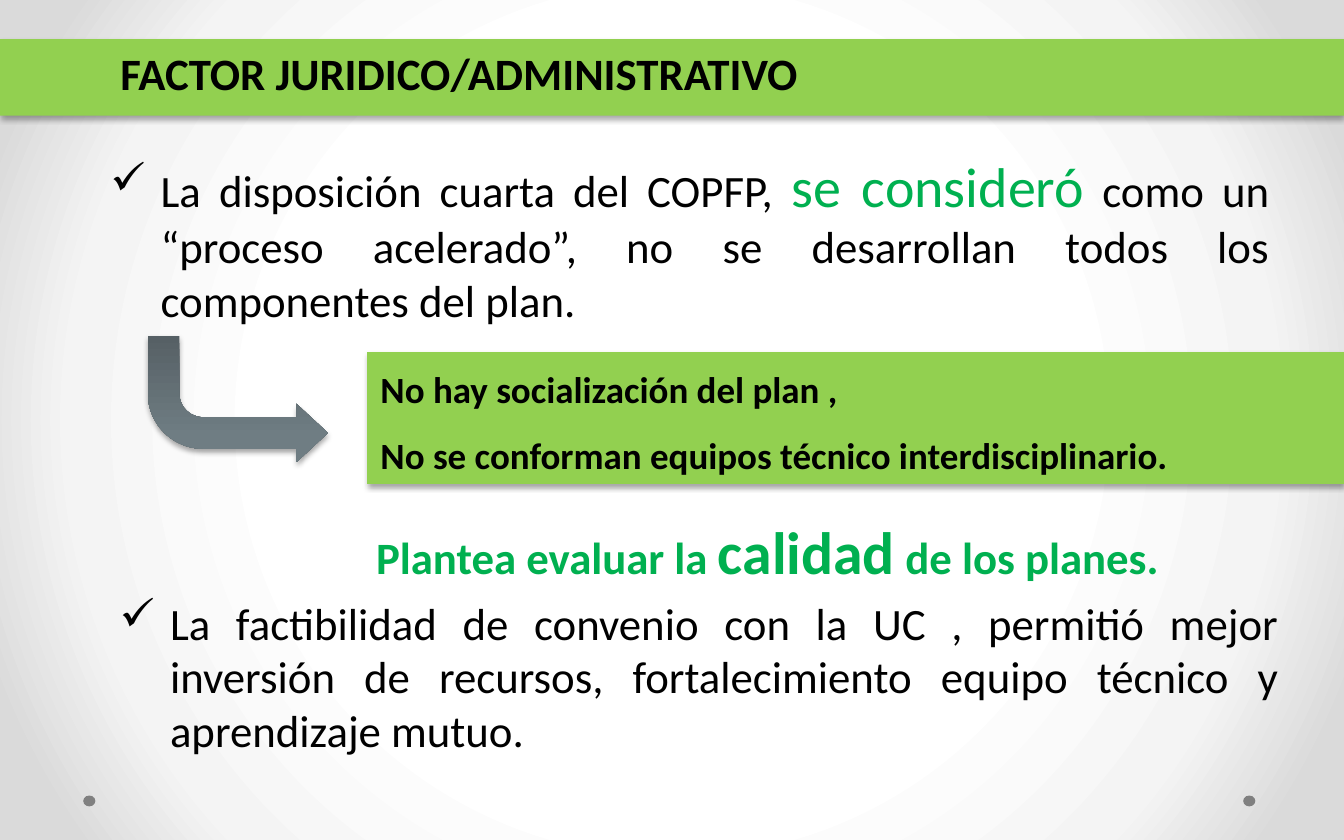
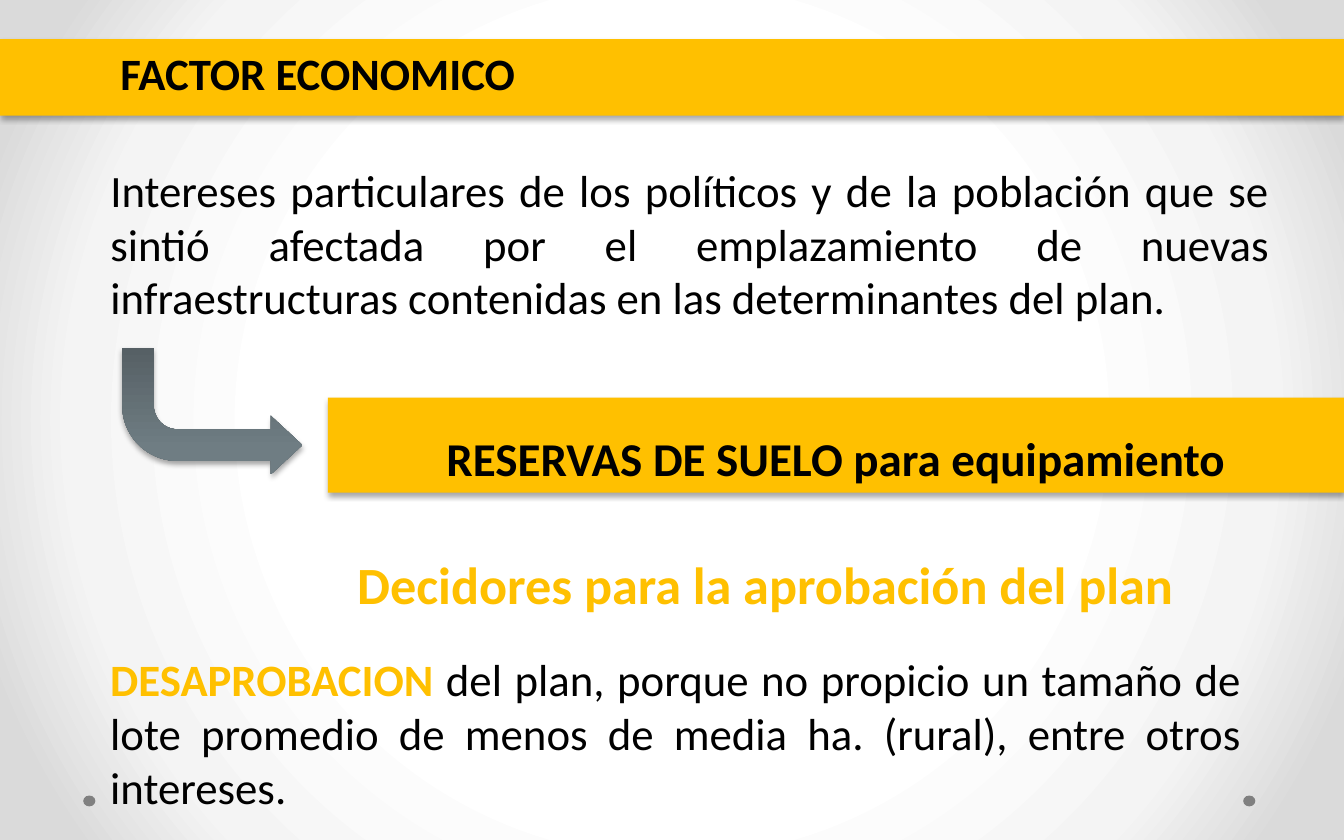
from dataclasses import dataclass
from typing import Any, NamedTuple, Optional

from lxml import etree
from pptx import Presentation
from pptx import util as u
from pptx.dml.color import RGBColor
from pptx.enum import shapes, text
from pptx.oxml import parse_xml
from pptx.oxml.ns import nsdecls, qn

BLACK = RGBColor(0x00, 0x00, 0x00)
GREY = RGBColor(0x80, 0x80, 0x80)
LIME = RGBColor(0x92, 0xD0, 0x50)
GREEN = RGBColor(0x00, 0xB0, 0x50)
AMBER = RGBColor(0xFF, 0xC0, 0x00)
WHITE = RGBColor(0xFF, 0xFF, 0xFF)
MIST = RGBColor(0xF4, 0xF4, 0xF4)
SILVER = RGBColor(0xDA, 0xDA, 0xDA)
SLATE_DARK = RGBColor(0x56, 0x60, 0x65)
SLATE = RGBColor(0x6F, 0x7D, 0x83)
SLATE_LIGHT = RGBColor(0x6F, 0x7E, 0x84)

FONT = "Calibri"
WIDTH, HEIGHT = 720, 450
RADIAL = ('<a:path path="circle"><a:fillToRect l="50000" t="50000" '
          'r="50000" b="50000"/></a:path>')
UPWARD = '<a:lin ang="16200000" scaled="0"/>'
BACKDROP_STOPS = ((50, WHITE), (76, MIST), (92, SILVER))
ARROW_STOPS = ((0, SLATE_DARK), (80, SLATE), (100, SLATE_LIGHT))
ARROW_BENDS = (0.25, 0.232, 0.25, 0.438)

LEFT = text.PP_ALIGN.LEFT
CENTER = text.PP_ALIGN.CENTER
JUSTIFY = text.PP_ALIGN.JUSTIFY
TOP = text.MSO_ANCHOR.TOP
MIDDLE = text.MSO_ANCHOR.MIDDLE
BOTTOM = text.MSO_ANCHOR.BOTTOM
SPACED = {"alignment": JUSTIFY, "space_before": u.Pt(4.8)}


class Area(NamedTuple):
    left: float
    top: float
    width: float
    height: float

    def points(self) -> list:
        return [u.Pt(value) for value in self]


class Span(NamedTuple):
    words: str
    size: float = 24
    color: RGBColor = BLACK
    bold: bool = False


@dataclass
class Block:
    area: Area
    spans: list[Span]
    layout: dict[str, Any]
    anchor: Any = TOP
    bullet: bool = False


@dataclass
class Factor:
    accent: RGBColor
    heading: Block
    arrow_left: float
    arrow_top: float
    callout: Block
    blocks: list[Block]


BAND = Area(0, 21, WIDTH, 41)
DOTS = [Area(left, 426.2, 6.5, 5.8) for left in (44.6, 666)]


def heading(words: str, width: float) -> Block:
    return Block(Area(52, 21, width, 42.5), [Span(words, bold=True)], SPACED)


FACTORS = [
    Factor(
        LIME,
        heading(" FACTOR JURIDICO/ADMINISTRATIVO", 399),
        79.2, 180,
        Block(Area(196.6, 188.6, 523.4, 70.6),
              [Span("No hay socialización del plan ,\n"
                    "No se conforman equipos técnico interdisciplinario.",
                    19.8, bold=True)],
              {"alignment": LEFT, "line_spacing": 1.5}, BOTTOM),
        [
            Block(Area(194.4, 270, 512.6, 49.7),
                  [Span("Plantea evaluar la ", 24, GREEN, True),
                   Span("calidad", 32, GREEN, True),
                   Span(" de los planes.", 24, GREEN, True)],
                  {"alignment": JUSTIFY}, MIDDLE),
            Block(Area(52, 77.8, 635, 102.2),
                  [Span("La disposición cuarta del COPFP, "),
                   Span("se consideró", 30, GREEN),
                   Span(" como un “proceso acelerado”, no se desarrollan "
                        "todos los componentes del plan.")],
                  SPACED, bullet=True),
            Block(Area(57, 315.4, 635, 102.2),
                  [Span("La factibilidad de convenio con la UC , permitió "
                        "mejor inversión de recursos, fortalecimiento equipo "
                        "técnico y aprendizaje mutuo.")],
                  SPACED, bullet=True),
        ],
    ),
    Factor(
        AMBER,
        heading(" FACTOR ECONOMICO", 285),
        65.5, 186.5,
        Block(Area(175.7, 213, 544.3, 51),
              [Span("RESERVAS DE SUELO para equipamiento", 25.2, bold=True)],
              {"alignment": CENTER, "line_spacing": u.Pt(58)}, BOTTOM),
        [
            Block(Area(52, 83.5, 635, 103),
                  [Span("Intereses particulares de los políticos y de la "
                        "población que se sintió afectada por el "
                        "emplazamiento de nuevas infraestructuras contenidas "
                        "en las determinantes del plan.")],
                  SPACED),
            Block(Area(184.3, 285, 532.8, 55.4),
                  [Span("Decidores para la aprobación del plan",
                        28, AMBER, True)],
                  {"alignment": LEFT}, MIDDLE),
            Block(Area(52, 350, 620, 85),
                  [Span("DESAPROBACION", 24, AMBER, True),
                   Span(" del plan, porque no propicio un tamaño de lote "
                        "promedio de menos de media ha. (rural), entre otros "
                        "intereses.")],
                  {"alignment": JUSTIFY}, MIDDLE),
        ],
    ),
]


def assign(target: Any, values: dict[str, Any]) -> None:
    for name, value in values.items():
        setattr(target, name, value)


def apply_gradient(fill: Any, holder: Any, stops: tuple, direction: str) -> None:
    fill.gradient()
    marks = "".join(
        f'<a:gs pos="{place * 1000}"><a:srgbClr val="{color}"/></a:gs>'
        for place, color in stops)
    holder.replace(holder.find(qn("a:gradFill")), parse_xml(
        f'<a:gradFill {nsdecls("a")} rotWithShape="1">'
        f"<a:gsLst>{marks}</a:gsLst>{direction}</a:gradFill>"))


def add_shadow(shape: Any) -> None:
    shape.shadow.inherit = False
    effects = shape._element.spPr.find(qn("a:effectLst"))
    effects.append(parse_xml(
        f'<a:outerShdw {nsdecls("a")} blurRad="{u.Pt(3.1)}" '
        f'dist="{u.Pt(1.8)}" dir="5400000" rotWithShape="0">'
        '<a:srgbClr val="000000"><a:alpha val="35000"/></a:srgbClr>'
        "</a:outerShdw>"))


def paint(shape: Any, color: RGBColor) -> None:
    shape.fill.solid()
    shape.fill.fore_color.rgb = color
    shape.line.fill.background()


def add_solid(page: Any, kind: Any, area: Area, color: RGBColor) -> Any:
    shape = page.shapes.add_shape(kind, *area.points())
    paint(shape, color)
    shape.shadow.inherit = False
    return shape


def add_arrow(page: Any, left: float, top: float) -> None:
    arrow = add_solid(page, shapes.MSO_SHAPE.BENT_ARROW,
                      Area(left, top, 96.5, 67.7), SLATE)
    for index, bend in enumerate(ARROW_BENDS):
        arrow.adjustments[index] = bend
    properties = arrow._element.spPr
    properties.find(qn("a:xfrm")).set("flipV", "1")
    apply_gradient(arrow.fill, properties, ARROW_STOPS, UPWARD)
    add_shadow(arrow)


def add_check(para: Any) -> None:
    properties = para._p.get_or_add_pPr()
    indent = u.Pt(27)
    properties.set("marL", str(indent))
    properties.set("indent", str(-indent))
    etree.SubElement(properties, qn("a:buChar")).set("char", "✓")


def write(box: Any, block: Block) -> None:
    frame = box.text_frame
    assign(frame, {"word_wrap": True, "auto_size": text.MSO_AUTO_SIZE.NONE,
                   "vertical_anchor": block.anchor})
    para = frame.paragraphs[0]
    assign(para, block.layout)
    if block.bullet:
        add_check(para)
    for span in block.spans:
        for number, line in enumerate(span.words.split("\n")):
            if number:
                para.add_line_break()
            run = para.add_run()
            run.text = line
            assign(run.font, {"name": FONT, "size": u.Pt(span.size),
                              "bold": span.bold})
            run.font.color.rgb = span.color


def add_text(page: Any, block: Block) -> None:
    write(page.shapes.add_textbox(*block.area.points()), block)


def place_title(title: Any, block: Block, accent: RGBColor) -> None:
    assign(title, dict(zip(("left", "top", "width", "height"),
                           block.area.points())))
    paint(title, accent)
    add_shadow(title)
    write(title, block)


def add_factor(deck: Any, factor: Factor) -> None:
    page = deck.slides.add_slide(deck.slide_layouts[5])
    for dot in DOTS:
        add_solid(page, shapes.MSO_SHAPE.OVAL, dot, GREY)
    add_shadow(add_solid(page, shapes.MSO_SHAPE.RECTANGLE, BAND, factor.accent))
    add_arrow(page, factor.arrow_left, factor.arrow_top)
    place_title(page.shapes.title, factor.callout, factor.accent)
    for block in [factor.heading, *factor.blocks]:
        add_text(page, block)


def set_backdrop(deck: Any) -> None:
    master = deck.slide_master
    fill = master.background.fill
    fill.solid()
    holder = master._element.cSld.find(qn("p:bg")).find(qn("p:bgPr"))
    apply_gradient(fill, holder, BACKDROP_STOPS, RADIAL)


def main() -> None:
    deck = Presentation()
    assign(deck, {"slide_width": u.Pt(WIDTH), "slide_height": u.Pt(HEIGHT)})
    set_backdrop(deck)
    for factor in FACTORS:
        add_factor(deck, factor)
    deck.save("out.pptx")


if __name__ == "__main__":
    main()
